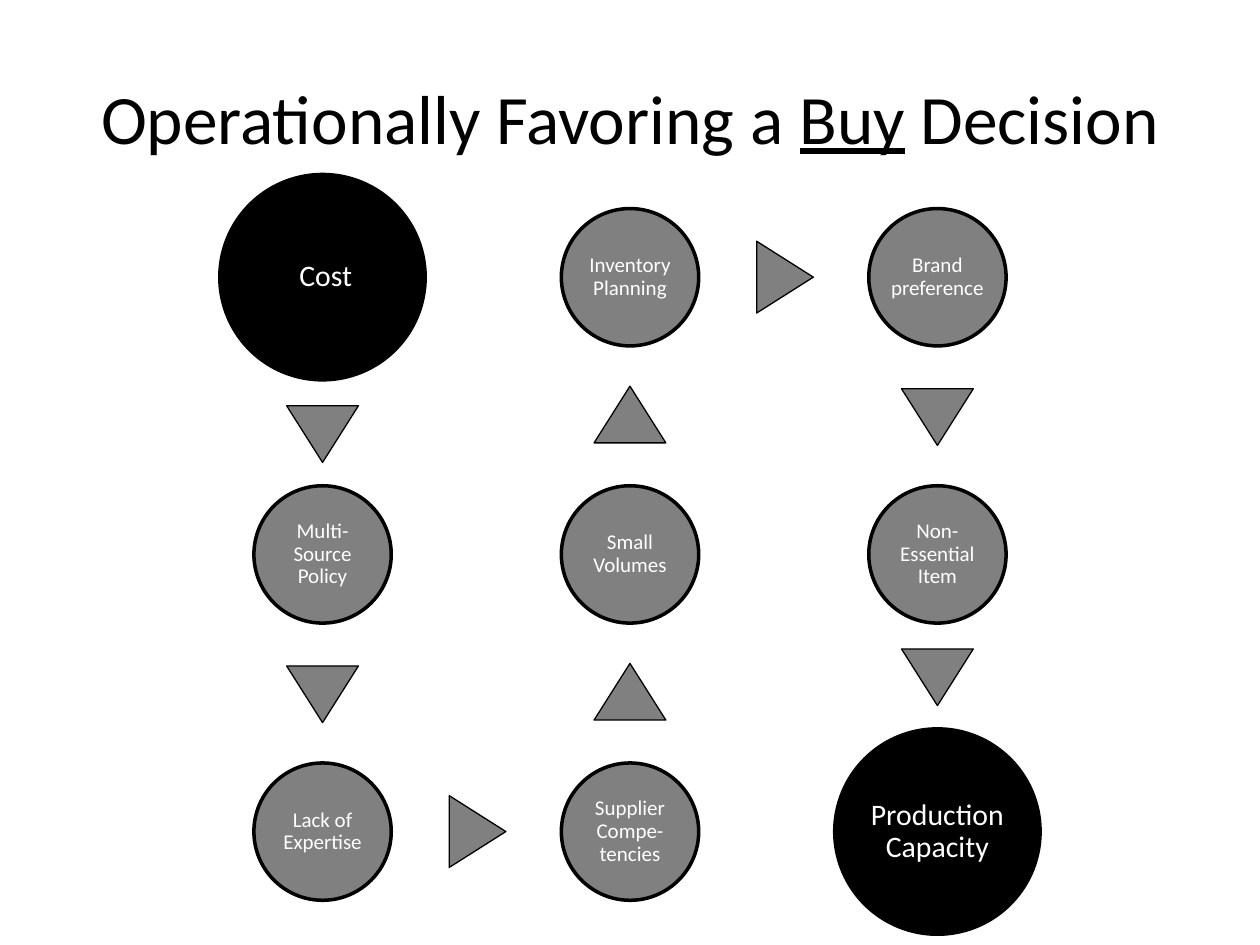
"""Build a slide with a snaking chain of reasons to buy."""
from dataclasses import dataclass
from itertools import pairwise

from pptx import Presentation
from pptx.dml.color import RGBColor
from pptx.enum.shapes import MSO_SHAPE
from pptx.enum.text import MSO_ANCHOR, PP_ALIGN
from pptx.util import Inches, Pt

BLACK = RGBColor(0x00, 0x00, 0x00)
GRAY = RGBColor(0x80, 0x80, 0x80)
WHITE = RGBColor(0xFF, 0xFF, 0xFF)
OVAL = MSO_SHAPE.OVAL
TRIANGLE = MSO_SHAPE.ISOSCELES_TRIANGLE
MIDDLE = MSO_ANCHOR.MIDDLE
CENTER = PP_ALIGN.CENTER

LEFT, TOP = 2.56, 2.2
PITCH_X, PITCH_Y = 2.44, 2.2
SMALL, LARGE = 1.09, 1.63
BASE, HEIGHT = 0.57, 0.45
NUDGE = 0.01


@dataclass
class Stop:
    """One circle of the chain, placed on the grid."""
    text: str
    col: int
    row: int
    big: bool = False

    @property
    def x(self) -> float:
        return LEFT + self.col * PITCH_X

    @property
    def y(self) -> float:
        return TOP + self.row * PITCH_Y

    @property
    def size(self) -> float:
        return LARGE if self.big else SMALL


STOPS = [
    Stop(" Cost", 0, 0, big=True),
    Stop("Multi-Source Policy", 0, 1),
    Stop("Lack of Expertise", 0, 2),
    Stop("Supplier Compe-tencies", 1, 2),
    Stop("Small Volumes", 1, 1),
    Stop("Inventory Planning", 1, 0),
    Stop("Brand preference", 2, 0),
    Stop("Non-Essential Item", 2, 1),
    Stop("Production Capacity", 2, 2, big=True),
]


def write(para, text: str, *, size: float, color: RGBColor,
          under: bool = False, space: float = 1.0) -> None:
    """Add a centred run to a paragraph."""
    para.alignment = CENTER
    para.line_spacing = space
    run = para.add_run()
    run.text = text
    font = run.font
    font.name = "Calibri"
    font.size = Pt(size)
    font.color.rgb = color
    font.underline = under


def draw(slide, kind, x: float, y: float, wide: float, high: float,
         fill: RGBColor, line: float):
    """Draw a black-edged shape around a centre point."""
    shape = slide.shapes.add_shape(
        kind, Inches(x - wide / 2), Inches(y - high / 2), Inches(wide), Inches(high))
    shape.shadow.inherit = False
    shape.fill.solid()
    shape.fill.fore_color.rgb = fill
    shape.line.color.rgb = BLACK
    shape.line.width = Pt(line)
    return shape


def draw_stop(slide, stop: Stop) -> None:
    """Draw a labelled circle."""
    fill = BLACK if stop.big else GRAY
    oval = draw(slide, OVAL, stop.x, stop.y, stop.size, stop.size, fill, 2)
    frame = oval.text_frame
    frame.word_wrap = True
    frame.vertical_anchor = MIDDLE
    frame.margin_left = frame.margin_right = 0
    frame.margin_top = frame.margin_bottom = 0
    write(frame.paragraphs[0], stop.text, size=17 if stop.big else 12,
          color=WHITE, space=0.9)


def draw_link(slide, start: Stop, end: Stop) -> None:
    """Draw a triangle in the gap between two circles."""
    across = end.col - start.col
    down = end.row - start.row
    shift = (start.size - end.size) / 4 + NUDGE
    x = (start.x + end.x) / 2 + across * shift
    y = (start.y + end.y) / 2 + down * shift
    mark = draw(slide, TRIANGLE, x, y, BASE, HEIGHT, GRAY, 0.75)
    mark.rotation = 90 if across else 90 + 90 * down


def draw_title(slide) -> None:
    """Fill and place the title."""
    title = slide.shapes.title
    title.left, title.top = Inches(0.5), Inches(0.3)
    title.width, title.height = Inches(9), Inches(1.25)
    title.text_frame.vertical_anchor = MIDDLE
    para = title.text_frame.paragraphs[0]
    for text, under in (("Operationally Favoring a ", False),
                        ("Buy", True), (" Decision", False)):
        write(para, text, size=39.6, color=BLACK, under=under)


def main() -> None:
    """Build and save the slide."""
    deck = Presentation()
    deck.slide_width, deck.slide_height = Inches(10), Inches(7.5)
    slide = deck.slides.add_slide(deck.slide_layouts[5])
    draw_title(slide)
    for stop in STOPS:
        draw_stop(slide, stop)
    for start, end in pairwise(STOPS):
        draw_link(slide, start, end)
    deck.save("out.pptx")


if __name__ == "__main__":
    main()
